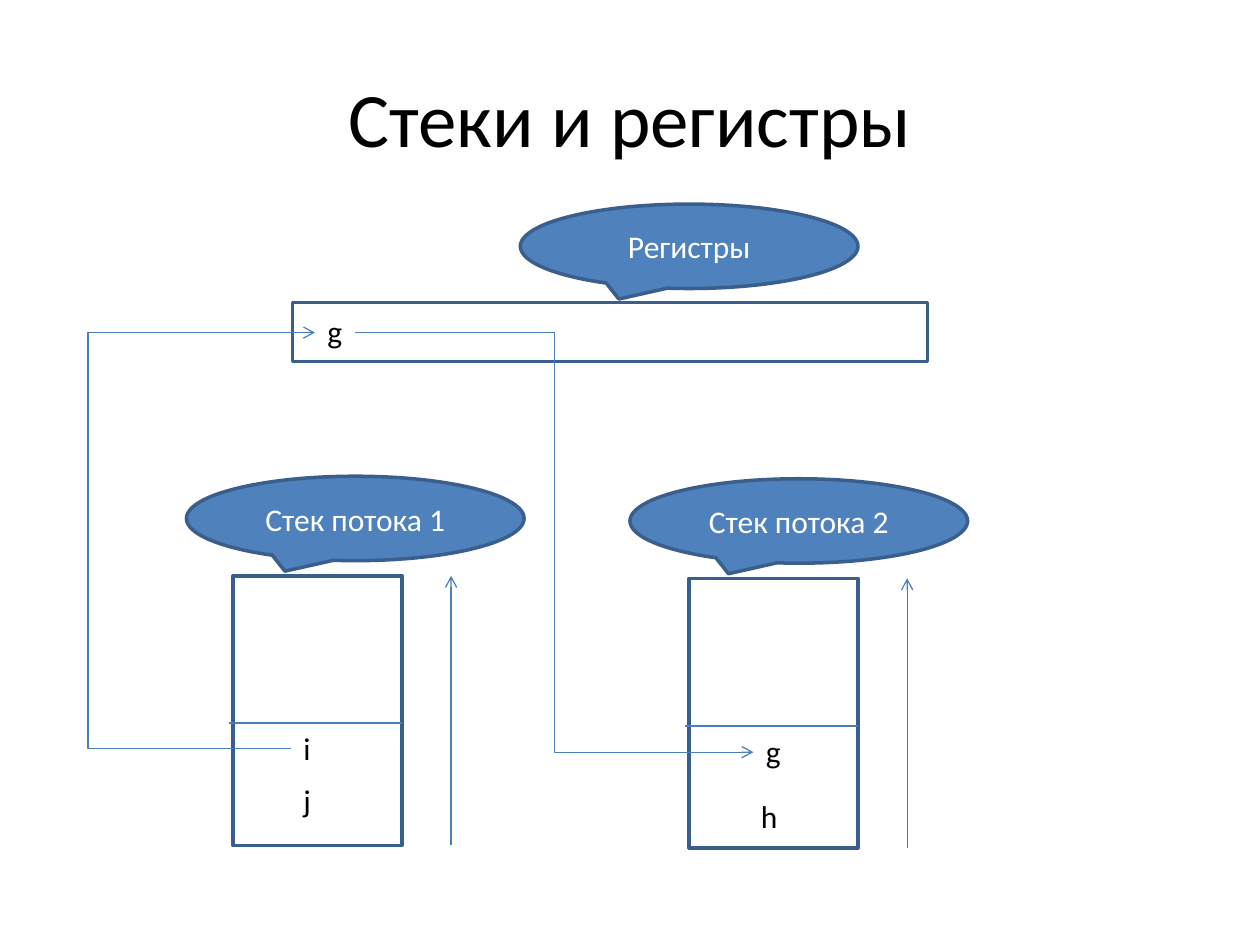
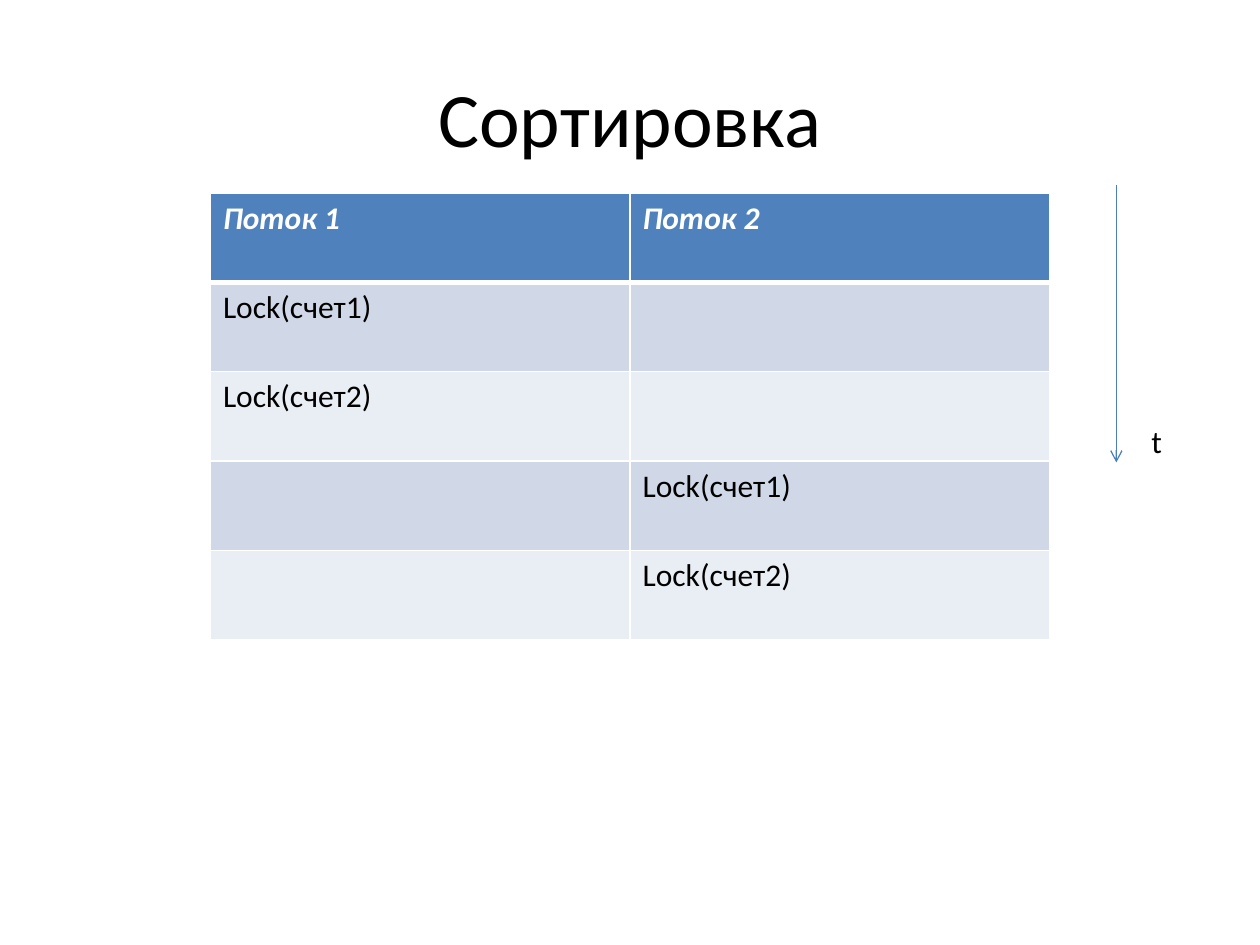
from dataclasses import dataclass
from typing import Optional

from lxml.etree import SubElement
from pptx import Presentation
from pptx.dml.color import RGBColor
from pptx.enum.shapes import MSO_CONNECTOR, MSO_SHAPE
from pptx.enum.text import MSO_ANCHOR, MSO_AUTO_SIZE, PP_ALIGN
from pptx.oxml.ns import qn
from pptx.util import Inches, Pt

# Shared look
COLORS = {
    "fill": "4F81BD", "outline": "3A5F8C", "line": "4B7EBC",
    "text": "000000", "white": "FFFFFF",
    "band_dark": "D0D8E8", "band_light": "E9EDF4",
}
BASE_FONT = {"name": "Calibri", "size": Pt(18)}
TITLE_FONT = {**BASE_FONT, "size": Pt(44)}
HEADER_FONT = {**BASE_FONT, "bold": True, "italic": True}
CALLOUT_W, CALLOUT_H = 2.68, 0.67
STACK_W, STACK_H = 1.34, 2.14
LABEL_H = 0.4
ROW_H, COL_W = 0.71, 3.33


@dataclass
class Label:
    text: str
    x: float
    y: float
    w: float = 0.31
    wrap: bool = True


@dataclass
class Stack:
    name: str
    x: float
    y: float
    callout_x: float


STACKS = [
    Stack("Стек потока 1", 1.85, 4.57, 1.48),
    Stack("Стек потока 2", 5.47, 4.59, 5.0),
]
VARIABLES = [
    Label("g", 2.5, 2.43, 0.32, wrap=False),
    Label("i", 2.31, 5.74),
    Label("j", 2.31, 6.15),
    Label("g", 5.98, 5.76),
    Label("h", 5.94, 6.28),
]
LOCK_ORDER = [
    ("Поток 1", "Поток 2"),
    ("Lock(счет1)", ""),
    ("Lock(счет2)", ""),
    ("", "Lock(счет1)"),
    ("", "Lock(счет2)"),
]


def rgb(key: str) -> RGBColor:
    return RGBColor.from_string(COLORS[key])


def write(tf, text: str, font: dict, color: str = "text", align=None) -> None:
    p = tf.paragraphs[0]
    p.alignment = align
    r = p.add_run()
    r.text = text
    for name, value in font.items():
        setattr(r.font, name, value)
    r.font.color.rgb = rgb(color)


def add_titled_slide(prs, title: str):
    s = prs.slides.add_slide(prs.slide_layouts[5])
    sp = s.shapes.title
    sp.left, sp.top, sp.width, sp.height = map(Inches, (0.5, 0.3, 9, 1.25))
    sp.text_frame.vertical_anchor = MSO_ANCHOR.MIDDLE
    write(sp.text_frame, title, TITLE_FONT, align=PP_ALIGN.CENTER)
    return s


def add_outlined(s, kind, x: float, y: float, w: float, h: float):
    sp = s.shapes.add_shape(kind, *map(Inches, (x, y, w, h)))
    sp.shadow.inherit = False
    sp.fill.background()
    sp.line.color.rgb = rgb("outline")
    sp.line.width = Pt(2)
    return sp


def add_callout(s, text: str, x: float, y: float) -> None:
    sp = add_outlined(s, MSO_SHAPE.OVAL_CALLOUT, x, y, CALLOUT_W, CALLOUT_H)
    sp.fill.solid()
    sp.fill.fore_color.rgb = rgb("fill")
    sp.text_frame.vertical_anchor = MSO_ANCHOR.MIDDLE
    write(sp.text_frame, text, BASE_FONT, "white", PP_ALIGN.CENTER)


def add_label(s, label: Label) -> None:
    sp = s.shapes.add_textbox(*map(Inches, (label.x, label.y, label.w, LABEL_H)))
    tf = sp.text_frame
    tf.word_wrap = label.wrap
    tf.auto_size = MSO_AUTO_SIZE.SHAPE_TO_FIT_TEXT
    write(tf, label.text, BASE_FONT)


def add_line(s, start: tuple, end: tuple, width: float = 0.75,
             arrow: bool = True, bend_x: Optional[float] = None) -> None:
    """Straight line, or an elbow whose vertical part runs at bend_x."""
    kind = MSO_CONNECTOR.STRAIGHT if bend_x is None else MSO_CONNECTOR.ELBOW
    c = s.shapes.add_connector(kind, *map(Inches, (*start, *end)))
    c.line.color.rgb = rgb("line")
    c.line.width = Pt(width)
    sp_pr = c._element.spPr
    if arrow:
        SubElement(sp_pr.find(qn("a:ln")), qn("a:tailEnd"), type="arrow")
    if bend_x is not None:
        ratio = (bend_x - start[0]) / (end[0] - start[0])
        guides = sp_pr.find(qn("a:prstGeom")).get_or_add_avLst()
        SubElement(guides, qn("a:gd"), name="adj1",
                   fmla=f"val {round(ratio * 100000)}")
    SubElement(sp_pr, qn("a:effectLst"))


def add_stack(s, stack: Stack) -> None:
    x, y = stack.x, stack.y
    add_outlined(s, MSO_SHAPE.RECTANGLE, x, y, STACK_W, STACK_H)
    add_callout(s, stack.name, stack.callout_x, y - 0.79)
    add_line(s, (x - 0.03, y + 1.17), (x + STACK_W, y + 1.17), 1, arrow=False)
    growth_x = x + 1.73
    add_line(s, (growth_x, y + STACK_H), (growth_x, y))


def set_borders(cell, widths: dict) -> None:
    tc_pr = cell._tc.get_or_add_tcPr()
    for side in "LRTB":
        ln = SubElement(tc_pr, qn(f"a:ln{side}"), w=str(Pt(widths.get(side, 1))))
        fill = SubElement(ln, qn("a:solidFill"))
        SubElement(fill, qn("a:srgbClr"), val=COLORS["white"])


def add_lock_table(s) -> None:
    rows, cols = len(LOCK_ORDER), len(LOCK_ORDER[0])
    frame = s.shapes.add_table(rows, cols, *map(
        Inches, (1.67, 1.53, COL_W * cols, ROW_H * rows)))
    for i, texts in enumerate(LOCK_ORDER):
        is_header = i == 0
        band = "fill" if is_header else ("band_light", "band_dark")[i % 2]
        # Thick rule between the header and the first row
        widths = {0: {"B": 3}, 1: {"T": 3}}.get(i, {})
        for j, text in enumerate(texts):
            cell = frame.table.cell(i, j)
            set_borders(cell, widths)
            cell.fill.solid()
            cell.fill.fore_color.rgb = rgb(band)
            if text:
                write(cell.text_frame, text,
                      HEADER_FONT if is_header else BASE_FONT,
                      "white" if is_header else "text")


def build_stacks_slide(prs) -> None:
    s = add_titled_slide(prs, "Стеки и регистры")
    # Registers and thread stacks
    add_outlined(s, MSO_SHAPE.RECTANGLE, 2.32, 2.4, 5.04, 0.47)
    add_callout(s, "Регистры", 4.13, 1.62)
    for stack in STACKS:
        add_stack(s, stack)
    # Variables and their moves
    for label in VARIABLES:
        add_label(s, label)
    add_line(s, (2.31, 5.94), (2.5, 2.64), bend_x=0.7)
    add_line(s, (2.82, 2.64), (5.98, 5.97), bend_x=4.4)


def build_sorting_slide(prs) -> None:
    s = add_titled_slide(prs, "Сортировка")
    add_lock_table(s)
    # Time axis
    add_line(s, (8.86, 1.47), (8.86, 3.67))
    add_label(s, Label("t", 9.04, 3.3, 0.29, wrap=False))


def main() -> None:
    prs = Presentation()
    prs.slide_width, prs.slide_height = Inches(10), Inches(7.5)
    build_stacks_slide(prs)
    build_sorting_slide(prs)
    prs.save("out.pptx")


if __name__ == "__main__":
    main()
